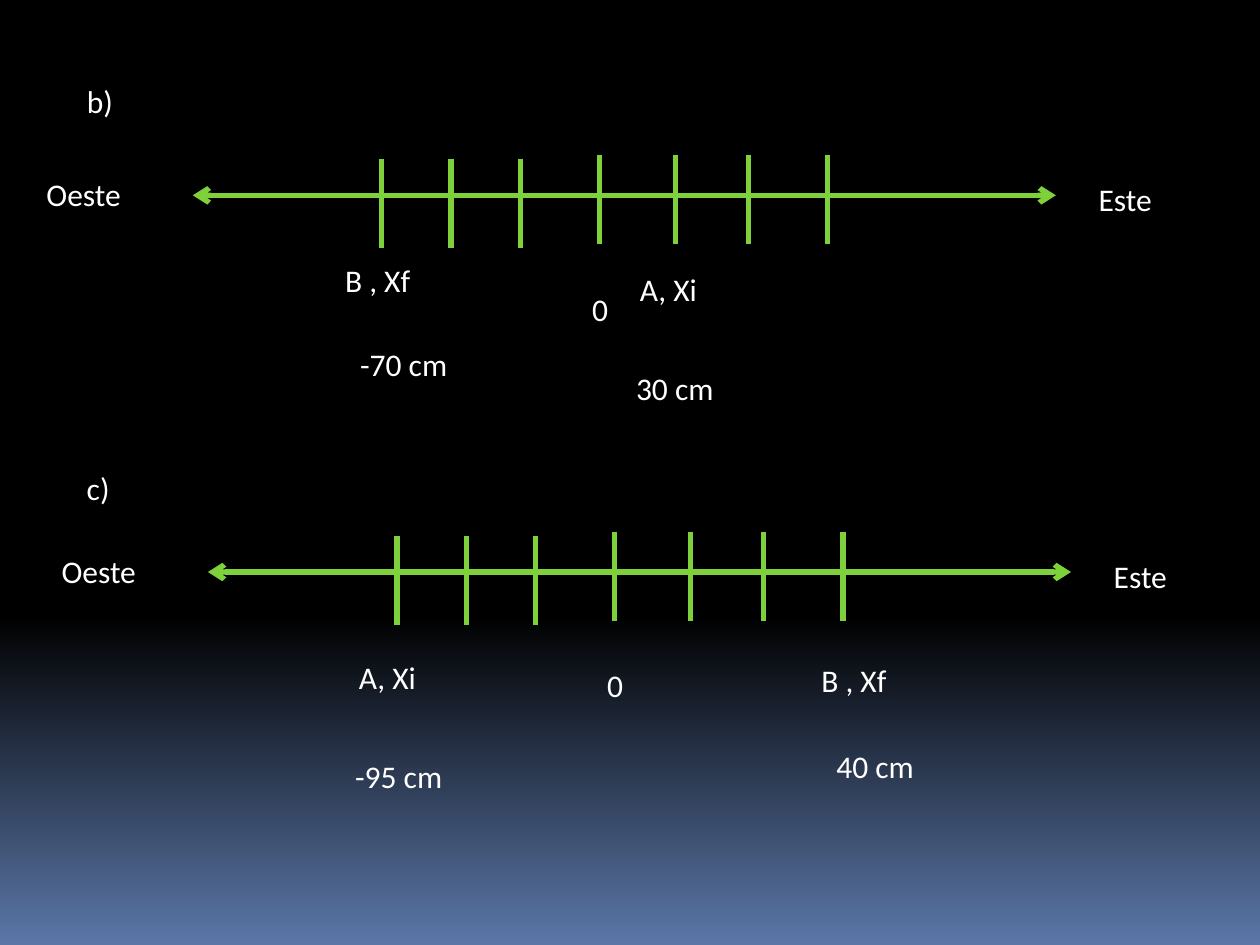
"""Builds a slide with two west-east number lines showing start and end positions."""
import copy

import pptx
import pptx.dml.color
import pptx.enum.dml
import pptx.enum.shapes
import pptx.enum.text
import pptx.oxml
import pptx.oxml.ns
import pptx.util

COLORS = {"night": "000000", "dusk": "5B77A8", "axis": "7FD13B", "text": "FFFFFF"}
WIDTH, HEIGHT = 10, 7.5
AXIS_LENGTH, TICK_LENGTH = 6.85, 0.71
TICKS = [(1.5, -0.29), (2.05, -0.29), (2.6, -0.29), (3.23, -0.32),
         (3.83, -0.32), (4.41, -0.32), (5.04, -0.32)]
SHARED_LABELS = [("Oeste", -1.26, -0.21, 1.42), ("0", 3.07, 0.7, 0.55),
                 ("Este", 7.09, -0.17, 1.42)]
NUMBER_LINES = [
    {"origin": (1.53, 1.55), "labels": [
        ("b)", -0.94, -0.95, 1.22),
        ("B , Xf", 1.11, 0.47, 0.75), ("-70 cm", 1.23, 1.14, 0.94),
        ("A, Xi", 3.45, 0.54, 0.75), ("30 cm", 3.42, 1.33, 0.94)]},
    {"origin": (1.65, 4.54), "labels": [
        ("c)", -1.06, -0.87, 0.94),
        ("A, Xi", 1.1, 0.63, 0.75), ("-95 cm", 1.07, 1.42, 0.94),
        ("B , Xf", 4.77, 0.66, 0.75), ("40 cm", 4.89, 1.34, 0.94)]},
]


def color(name):
    return pptx.dml.color.RGBColor.from_string(COLORS[name])


def paint_background(slide):
    fill = slide.background.fill
    fill.gradient()
    fill.gradient_angle = 270
    stop_list = slide.element.xpath(".//a:gsLst")[0]
    stop_list.insert(0, copy.deepcopy(stop_list[0]))
    stops = [(0, "night"), (0.65, "night"), (1, "dusk")]
    for stop, (position, name) in zip(fill.gradient_stops, stops):
        stop.position = position
        stop.color.rgb = color(name)


def add_text(slide, text, *, left, top, width, height=0.4, size=18, font="Calibri", fill="text"):
    inches = pptx.util.Inches
    shape = slide.shapes.add_textbox(inches(left), inches(top), inches(width), inches(height))
    frame = shape.text_frame
    frame.word_wrap = True
    frame.auto_size = pptx.enum.text.MSO_AUTO_SIZE.SHAPE_TO_FIT_TEXT
    run = frame.paragraphs[0].add_run()
    run.text = text
    run.font.size = pptx.util.Pt(size)
    run.font.name = font
    run.font.color.rgb = color(fill)


def add_line(slide, start, end, arrows=False):
    points = [pptx.util.Inches(value) for value in (*start, *end)]
    connector = slide.shapes.add_connector(pptx.enum.shapes.MSO_CONNECTOR.STRAIGHT, *points)
    connector.line.color.rgb = color("axis")
    connector.line.width = pptx.util.Pt(3)
    properties = connector.element.spPr
    if arrows:
        for tag in ("a:headEnd", "a:tailEnd"):
            arrow = pptx.oxml.parse_xml(f'<{tag} {pptx.oxml.ns.nsdecls("a")} type="arrow"/>')
            properties.find(pptx.oxml.ns.qn("a:ln")).append(arrow)
    properties.append(pptx.oxml.parse_xml(f'<a:effectLst {pptx.oxml.ns.nsdecls("a")}/>'))


def add_number_line(slide, origin, labels):
    left, top = origin
    add_line(slide, origin, (left + AXIS_LENGTH, top), arrows=True)
    for across, rise in TICKS:
        start = (left + across, top + rise)
        add_line(slide, start, (start[0], start[1] + TICK_LENGTH))
    for text, across, down, width in SHARED_LABELS + labels:
        add_text(slide, text, left=left + across, top=top + down, width=width)


def main():
    presentation = pptx.Presentation()
    presentation.slide_width = pptx.util.Inches(WIDTH)
    presentation.slide_height = pptx.util.Inches(HEIGHT)
    slide = presentation.slides.add_slide(presentation.slide_layouts[6])
    paint_background(slide)
    for number_line in NUMBER_LINES:
        add_number_line(slide, **number_line)
    presentation.save("out.pptx")


if __name__ == "__main__":
    main()
